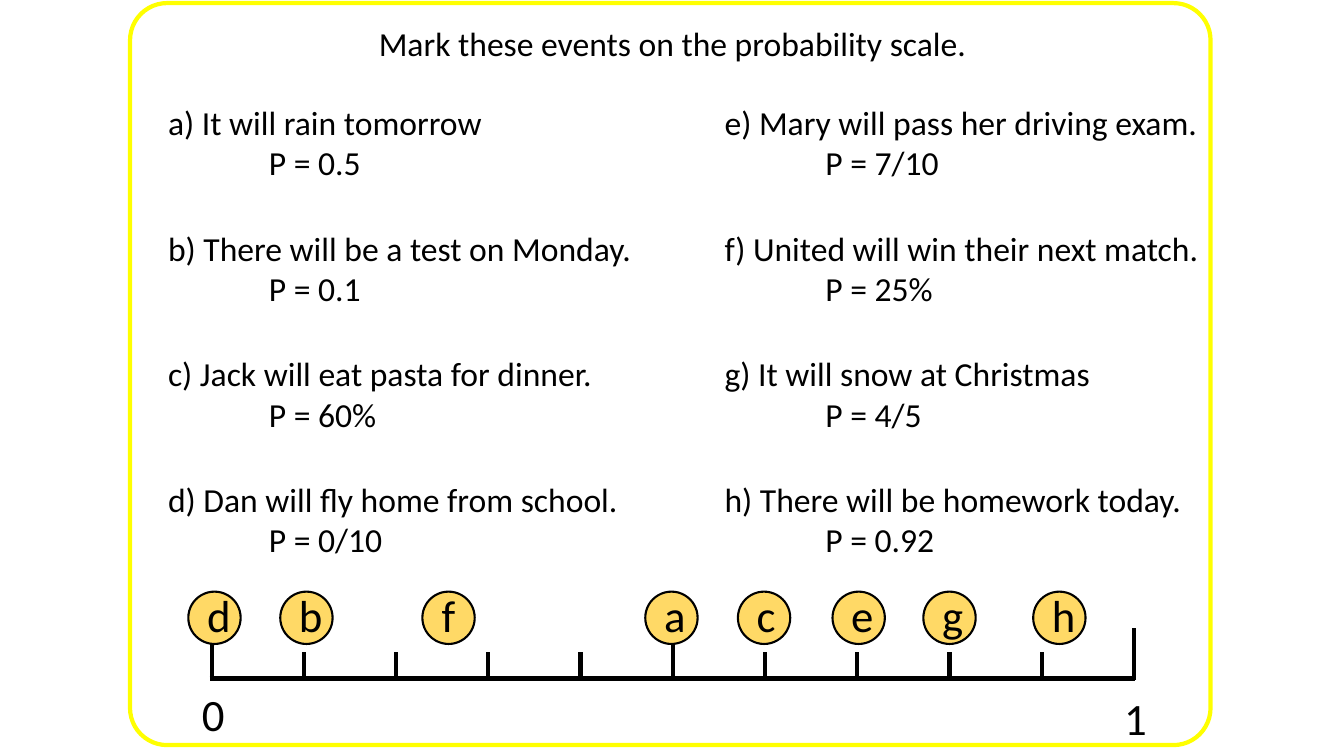
"""Builds a slide of events to mark on a probability scale."""
from lxml.etree import SubElement
from pptx import Presentation
from pptx.dml.color import RGBColor as RGB
from pptx.enum.shapes import MSO_CONNECTOR as LINE, MSO_SHAPE as SHAPE
from pptx.enum.text import MSO_ANCHOR as ANCHOR, PP_ALIGN as ALIGN
from pptx.oxml.ns import qn
from pptx.util import Pt

HEADING = "Mark these events on the probability scale."
EVENT_COLUMNS = [
    [("a) It will rain tomorrow", "P = 0.5"),
     ("b) There will be a test on Monday.", "P = 0.1"),
     ("c) Jack will eat pasta for dinner.", "P = 60%"),
     ("d) Dan will fly home from school.", "P = 0/10")],
    [("e) Mary will pass her driving exam.", "P = 7/10"),
     ("f) United will win their next match.", "P = 25%"),
     ("g) It will snow at Christmas", "P = 4/5"),
     ("h) There will be homework today.", "P = 0.92")],
]
MARKS = [("a", 0.5, -1), ("b", 0.1, 1.8), ("c", 0.6, -0.7), ("e", 0.7, 1),
         ("f", 0.25, 4.5), ("g", 0.8, 0), ("d", 0, 2), ("h", 0.92, -0.6)]
SCALE_ENDS = [("0", 136.8, 486.7), ("1", 795.6, 489.6)]

THEME = {"font": "Calibri", "ink": RGB(0, 0, 0), "mark": RGB(255, 217, 102),
         "frame": RGB(255, 255, 0), "body": 24, "scale": 32}

SCALE_LEFT, SCALE_RIGHT, SCALE_Y, TICK_FOOT = 151.2, 810, 484.6, 486
SHORT_TOP, LONG_TOP = 465.8, 448.6
STEPS = 10
MARK_SIZE, MARK_TOP = 37.4, 422.6
COLUMN_LEFTS, FIRST_EVENT, EVENT_PITCH = (113, 510.5), 69.1, 89.8


def write(holder, text, size=THEME["body"], align=ALIGN.LEFT, indents=(), wrap=True):
    """Put lines of formatted text into a shape."""
    frame = holder.text_frame
    frame.word_wrap = wrap
    frame.text = text
    for paragraph in frame.paragraphs:
        paragraph.alignment = align
        font = paragraph.runs[0].font
        font.name, font.size, font.color.rgb = THEME["font"], Pt(size), THEME["ink"]
    for paragraph, indent in zip(frame.paragraphs, indents):
        paragraph._p.get_or_add_pPr().set("marL", str(Pt(indent)))
    return frame


def textbox(slide, left, top, width, height):
    """Add an empty text box, measured in points."""
    return slide.shapes.add_textbox(Pt(left), Pt(top), Pt(width), Pt(height))


def outlined(slide, kind, left, top, width, height, color, weight):
    """Add an outlined shape without fill or shadow."""
    shape = slide.shapes.add_shape(kind, Pt(left), Pt(top), Pt(width), Pt(height))
    shape.shadow.inherit = False
    shape.fill.background()
    shape.line.color.rgb, shape.line.width = color, Pt(weight)
    return shape


def rule(slide, x1, y1, x2, y2):
    """Draw one stroke of the scale."""
    stroke = slide.shapes.add_connector(LINE.STRAIGHT, Pt(x1), Pt(y1), Pt(x2), Pt(y2))
    stroke.line.color.rgb, stroke.line.width = THEME["ink"], Pt(3)
    SubElement(stroke._element.spPr, qn("a:effectLst"))


def scale_x(probability):
    """Give the place of a probability along the scale."""
    return SCALE_LEFT + probability * (SCALE_RIGHT - SCALE_LEFT)


def draw_scale(slide):
    """Draw the axis, its ticks and its end labels."""
    rule(slide, SCALE_LEFT - 1.4, SCALE_Y, SCALE_RIGHT + 0.7, SCALE_Y)
    for step in range(STEPS + 1):
        x = scale_x(step / STEPS)
        top = SHORT_TOP if step % (STEPS // 2) else LONG_TOP
        rule(slide, x, TICK_FOOT, x, top)
    for label, left, top in SCALE_ENDS:
        write(textbox(slide, left, top, 31, 46), label, size=THEME["scale"],
              align=ALIGN.CENTER, wrap=False)


def draw_events(slide):
    """Lay the events out in two columns."""
    for left, events in zip(COLUMN_LEFTS, EVENT_COLUMNS):
        for row, event in enumerate(events):
            box = textbox(slide, left, FIRST_EVENT + row * EVENT_PITCH, 383.8, 65.5)
            write(box, "\n".join(event), indents=(0, 72))


def draw_marks(slide):
    """Place a lettered circle above the scale for each event."""
    for letter, probability, nudge in MARKS:
        left = scale_x(probability) + nudge - MARK_SIZE / 2
        mark = outlined(slide, SHAPE.OVAL, left, MARK_TOP, MARK_SIZE, MARK_SIZE,
                        THEME["ink"], 1.5)
        mark.fill.solid()
        mark.fill.fore_color.rgb = THEME["mark"]
        frame = write(mark, letter, size=THEME["scale"], align=ALIGN.CENTER)
        frame.vertical_anchor = ANCHOR.MIDDLE
        frame.margin_left = frame.margin_right = Pt(7.9)
        frame.margin_top, frame.margin_bottom = Pt(3.6), Pt(8.6)


def main():
    """Build and save the slide."""
    deck = Presentation()
    deck.slide_width, deck.slide_height = Pt(960), Pt(540)
    slide = deck.slides.add_slide(deck.slide_layouts[6])
    draw_scale(slide)
    write(textbox(slide, 261.4, 13, 437.8, 36), HEADING, align=ALIGN.CENTER, wrap=False)
    draw_events(slide)
    border = outlined(slide, SHAPE.ROUNDED_RECTANGLE, 92.9, 2.2, 771.8, 530,
                      THEME["frame"], 3)
    border.adjustments[0] = 0.05
    draw_marks(slide)
    deck.save("out.pptx")


if __name__ == "__main__":
    main()
